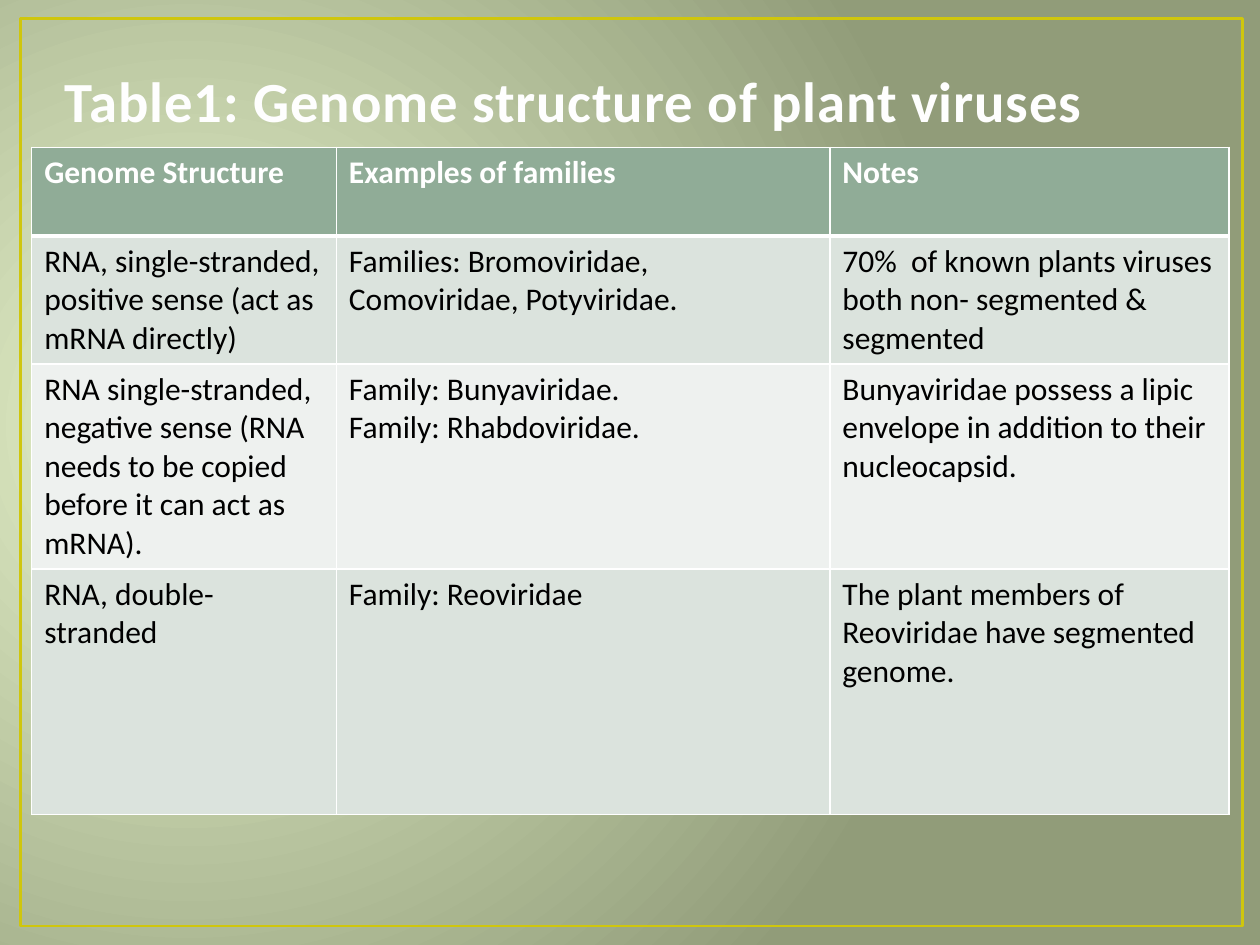
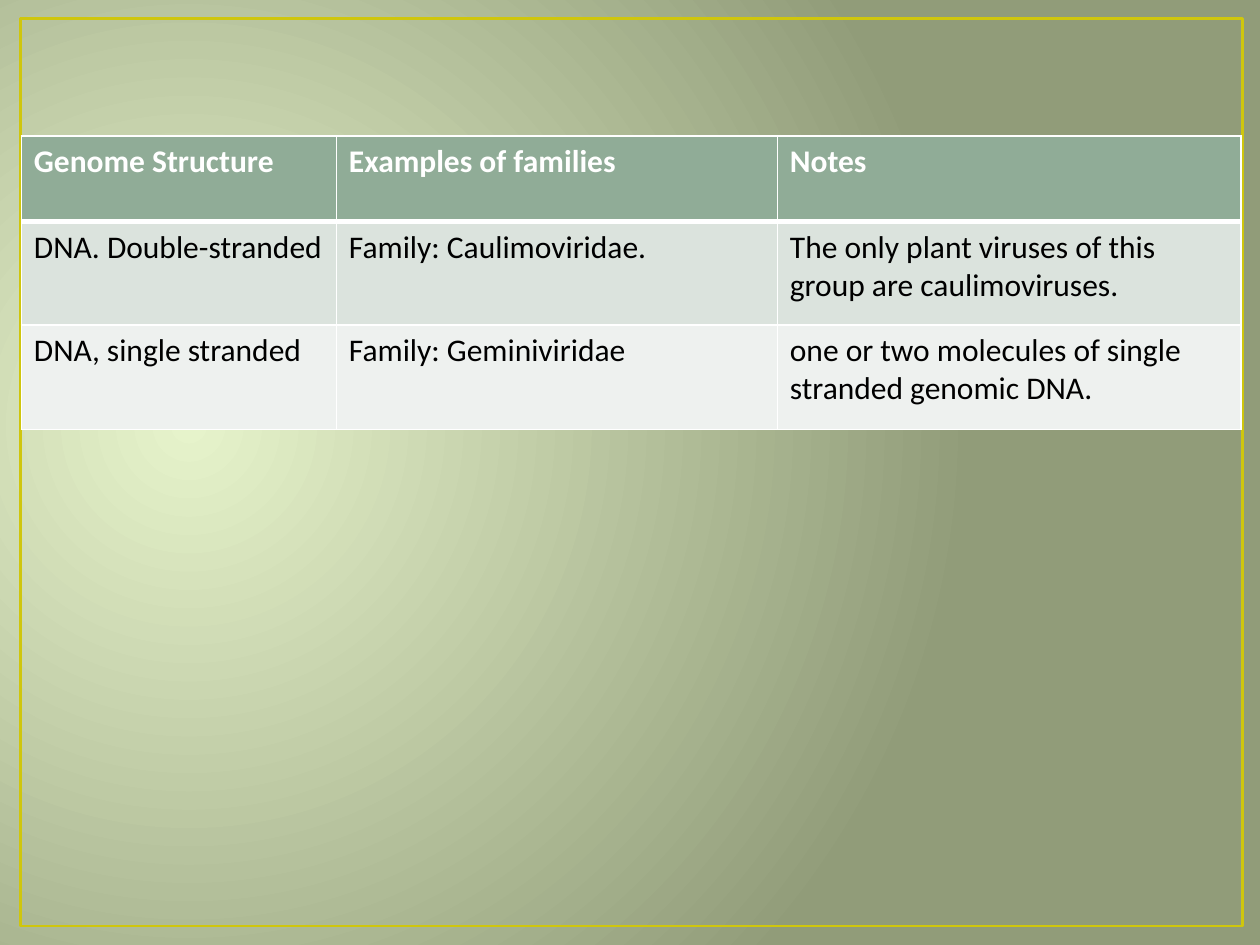
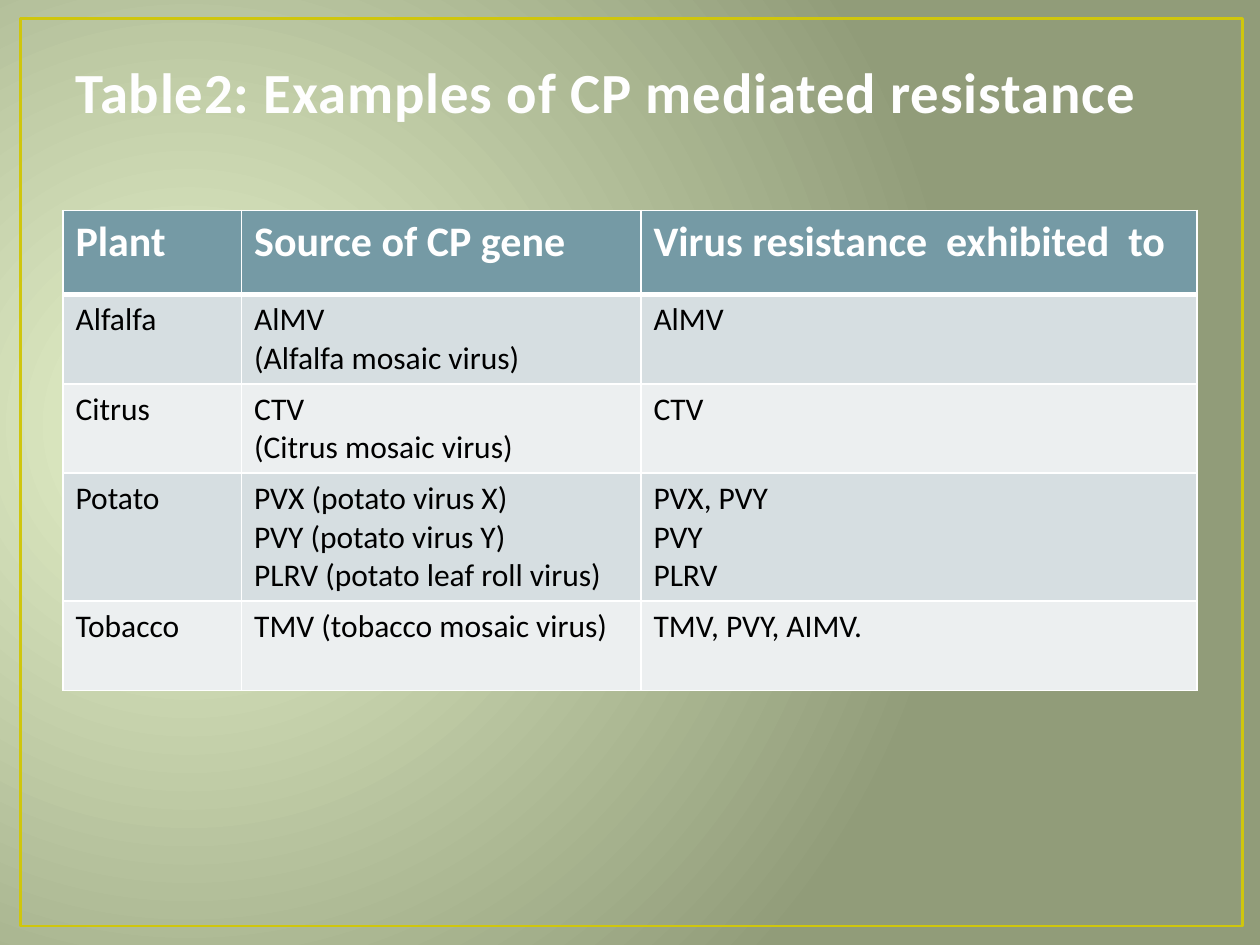
from lxml import etree
from pptx import Presentation
from pptx import util as u
from pptx.dml.color import RGBColor
from pptx.enum import shapes, text
from pptx.oxml.ns import qn

FONT = "Calibri"
COLORS = {
    "glow": "E6F3CB", "olive": "919C79", "frame": "CFC60D", "title": "FEFEFE",
    "white": "FFFFFF", "black": "000000",
    "green": "90AC97", "green band": "DBE3DD", "green light": "EEF1EF",
    "blue": "759AA5", "blue band": "D6DEE1", "blue light": "ECEFF0",
}
GENOME_HEADER = ["Genome Structure", "Examples of families", "Notes"]
RNA_VIRUSES = [
    GENOME_HEADER,
    ["RNA, single-stranded, positive sense (act as mRNA directly)",
     "Families: Bromoviridae, Comoviridae, Potyviridae.",
     "70%  of known plants viruses both non- segmented & segmented"],
    ["RNA single-stranded, negative sense (RNA needs to be copied before it can act as mRNA).",
     "Family: Bunyaviridae.\nFamily: Rhabdoviridae.",
     "Bunyaviridae possess a lipic envelope in addition to their nucleocapsid."],
    ["RNA, double-stranded", "Family: Reoviridae",
     "The plant members of Reoviridae have segmented genome."],
]
DNA_VIRUSES = [
    GENOME_HEADER,
    ["DNA. Double-stranded", "Family: Caulimoviridae.",
     "The only plant viruses of this group are caulimoviruses."],
    ["DNA, single stranded", "Family: Geminiviridae",
     "one or two molecules of single stranded genomic DNA."],
]
CP_RESISTANCE = [
    ["Plant", "Source of CP gene", "Virus resistance  exhibited  to"],
    ["Alfalfa", "AlMV\n(Alfalfa mosaic virus)", "AlMV"],
    ["Citrus", "CTV\n(Citrus mosaic virus)", "CTV"],
    ["Potato",
     "PVX (potato virus X)\nPVY (potato virus Y)\nPLRV (potato leaf roll virus)",
     "PVX, PVY\nPVY\nPLRV"],
    ["Tobacco", "TMV (tobacco mosaic virus)", "TMV, PVY, AIMV."],
]


def rgb(name):
    return RGBColor.from_string(COLORS[name])


def style_font(paragraph, size, color, bold):
    font = paragraph.font
    font.name, font.size, font.bold = FONT, u.Pt(size), bold
    font.color.rgb = rgb(color)


def set_background(master):
    """Give every slide a radial glow centred at the left."""
    fill = master.background.fill
    fill.gradient()
    for stop, color in zip(fill.gradient_stops, ("glow", "olive")):
        stop.color.rgb = rgb(color)
    linear = master.element.find(".//" + qn("p:bg")).find(".//" + qn("a:lin"))
    radial = etree.Element(qn("a:path"), path="circle")
    etree.SubElement(radial, qn("a:fillToRect"), l="15000", t="50000", r="85000", b="60000")
    linear.getparent().replace(linear, radial)


def add_framed_slide(prs):
    slide = prs.slides.add_slide(prs.slide_layouts[6])
    frame = slide.shapes.add_shape(shapes.MSO_SHAPE.RECTANGLE,
                                   u.Cm(0.41), u.Cm(0.38), u.Cm(24.64), u.Cm(18.29))
    frame.shadow.inherit = False
    frame.fill.background()
    frame.line.color.rgb = rgb("frame")
    frame.line.width = u.Pt(1.5)
    return slide


def add_title(slide, wording, left, top, width, height, space_below):
    title = slide.shapes.add_textbox(u.Cm(left), u.Cm(top), u.Cm(width), u.Cm(height))
    frame = title.text_frame
    frame.word_wrap = True
    frame.vertical_anchor = text.MSO_ANCHOR.BOTTOM
    frame.margin_bottom = u.Cm(space_below)
    frame.text = wording
    paragraph = frame.paragraphs[0]
    style_font(paragraph, 32.4, "title", True)
    paragraph.runs[0].font.size = u.Pt(32.4)
    paragraph.runs[0].font._element.set("spc", "50")


def add_borders(cell, top, bottom):
    """Draw white borders; top and bottom widths are in points."""
    properties = cell._tc.get_or_add_tcPr()
    for side, width in (("L", 1), ("R", 1), ("T", top), ("B", bottom)):
        line = etree.SubElement(properties, qn("a:ln" + side), w=str(u.Pt(width)))
        solid = etree.SubElement(line, qn("a:solidFill"))
        etree.SubElement(solid, qn("a:srgbClr"), val=COLORS["white"])


def add_banded_table(slide, rows, left, top, widths, heights, hue, header_size=18):
    table = slide.shapes.add_table(len(rows), len(widths), u.Cm(left), u.Cm(top),
                                   u.Cm(sum(widths)), u.Cm(sum(heights))).table
    table.horz_banding = False
    for column, width in zip(table.columns, widths):
        column.width = u.Cm(width)
    for r, (wordings, height) in enumerate(zip(rows, heights)):
        table.rows[r].height = u.Cm(height)
        header = r == 0
        fill = hue if header else hue + (" band" if r % 2 else " light")
        for c, wording in enumerate(wordings):
            cell = table.cell(r, c)
            add_borders(cell, top=3 if r == 1 else 1, bottom=3 if header else 1)
            cell.fill.solid()
            cell.fill.fore_color.rgb = rgb(fill)
            cell.text = wording
            for paragraph in cell.text_frame.paragraphs:
                style_font(paragraph, header_size if header else 18,
                           "white" if header else "black", header)


def main():
    prs = Presentation()
    prs.slide_width, prs.slide_height = u.Cm(25.4), u.Cm(19.05)
    set_background(prs.slide_master)

    rna = add_framed_slide(prs)
    add_title(rna, "Table1: Genome structure of plant viruses",
              1.06, 0.84, 23.07, 1.9, space_below=0.05)
    add_banded_table(rna, RNA_VIRUSES, 0.64, 2.97, [6.14, 9.95, 8.05],
                     [1.79, 2.58, 4.13, 4.95], "green")

    dna = add_framed_slide(prs)
    add_banded_table(dna, DNA_VIRUSES, 0.43, 2.74, [6.35, 8.89, 9.35],
                     [1.73, 2.08, 2.11], "green")

    resistance = add_framed_slide(prs)
    add_title(resistance, "Table2: Examples of CP mediated resistance",
              1.27, 0.64, 22.86, 3.3, space_below=1.43)
    add_banded_table(resistance, CP_RESISTANCE, 1.27, 4.24, [3.6, 8.05, 11.21],
                     [1.7, 1.8, 1.8, 2.58, 1.8], "blue", header_size=24)

    prs.save("out.pptx")


if __name__ == "__main__":
    main()
